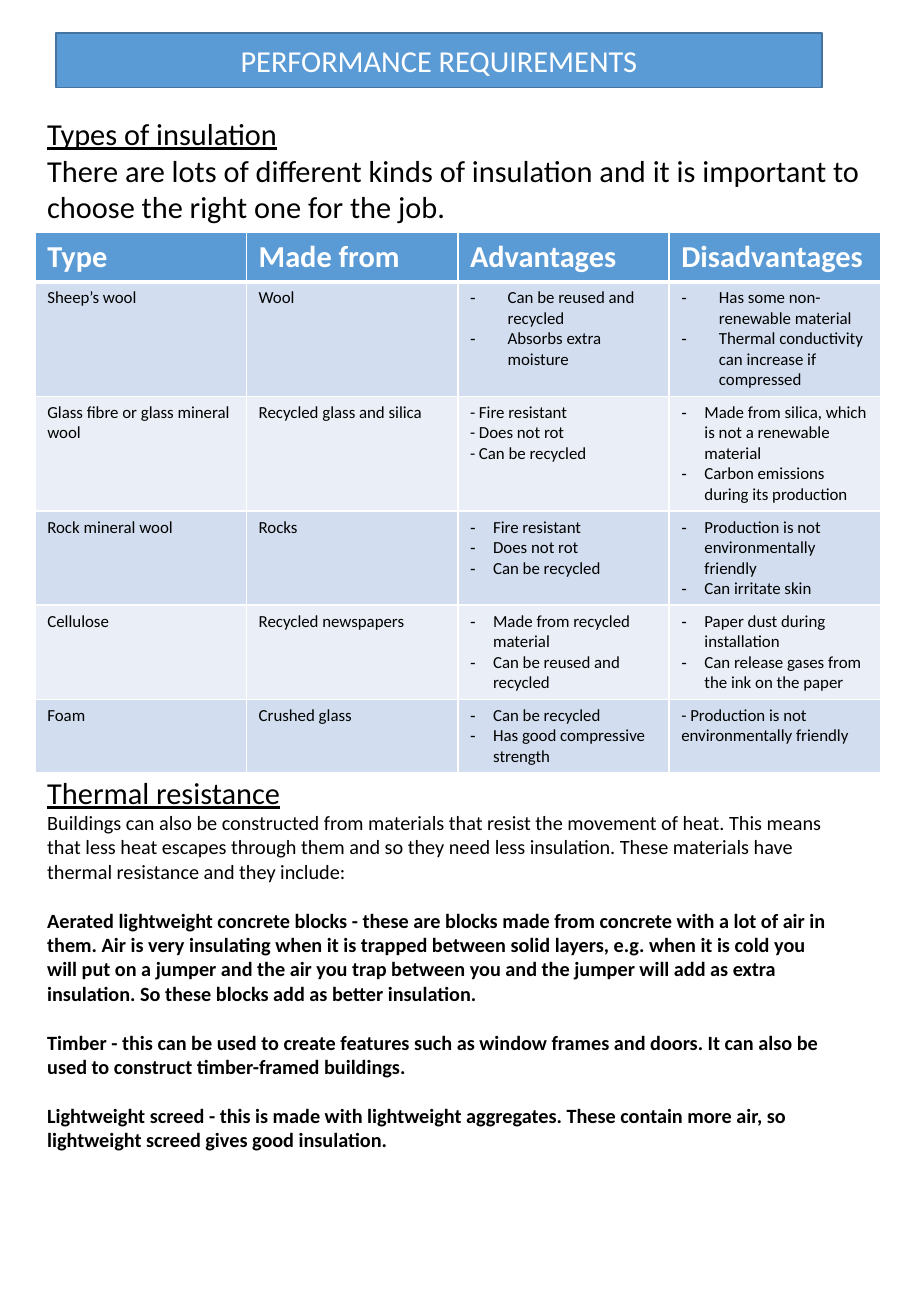
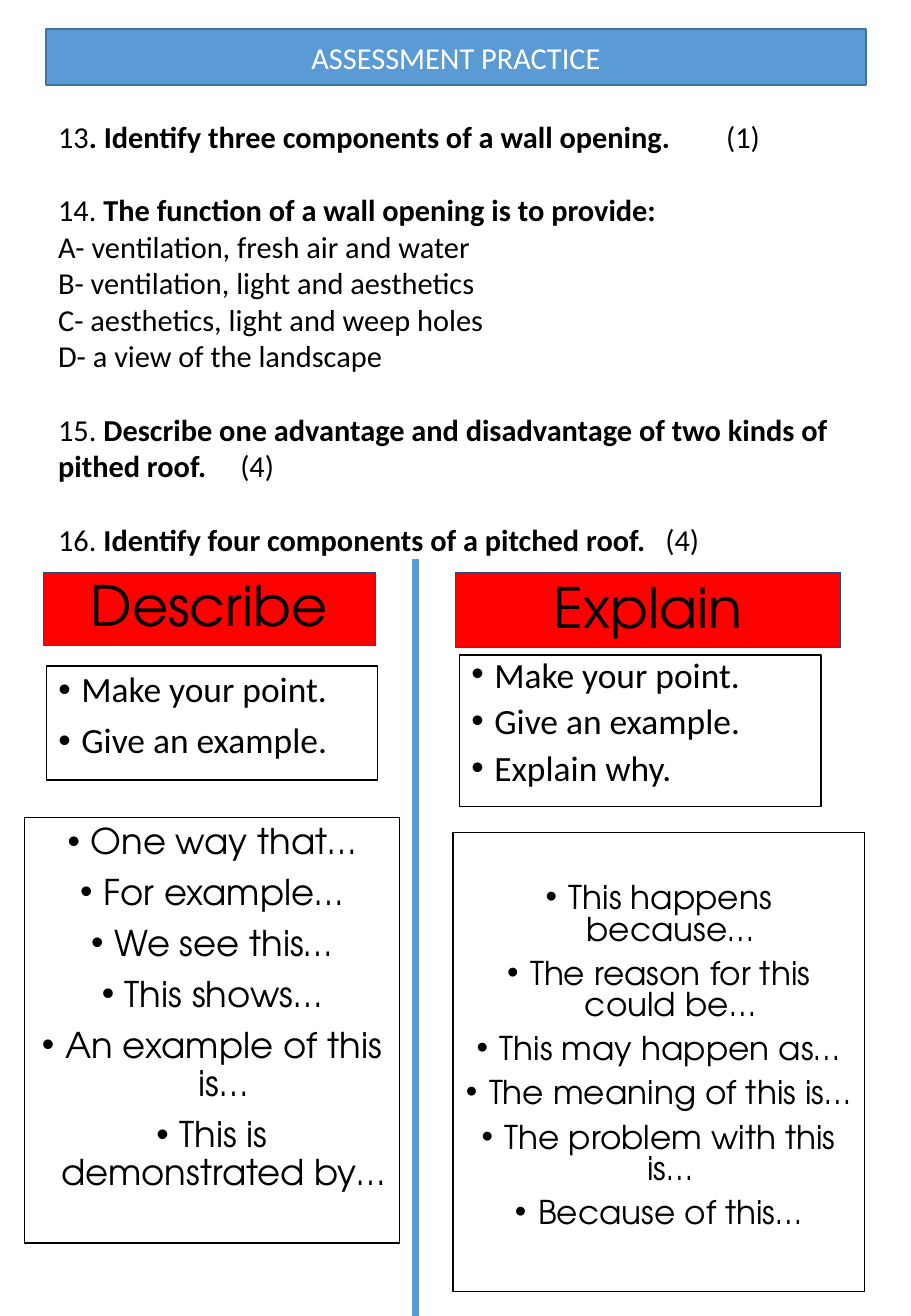
from lxml import etree
from pptx import Presentation
from pptx.dml.color import RGBColor
from pptx.enum.shapes import MSO_CONNECTOR, MSO_SHAPE
from pptx.enum.text import MSO_ANCHOR, MSO_AUTO_SIZE, PP_ALIGN
from pptx.oxml.ns import qn
from pptx.util import Pt

PX = 9144  # EMU; 100 px to the inch
PAGE_WIDTH, PAGE_HEIGHT = 750, 1083
COMPARISON_LAYOUT, TITLE_ONLY_LAYOUT = 4, 5
LEFT, CENTER = PP_ALIGN.LEFT, PP_ALIGN.CENTER
TOP, MIDDLE = MSO_ANCHOR.TOP, MSO_ANCHOR.MIDDLE
NO_AUTOFIT = MSO_AUTO_SIZE.NONE
RECTANGLE, STRAIGHT = MSO_SHAPE.RECTANGLE, MSO_CONNECTOR.STRAIGHT

COLORS = {
    "blue": "5B9BD5", "blue edge": "43739E", "navy": "1F4E79", "red": "FF0000",
    "white": "FFFFFF", "black": "000000", "dark band": "D2DEEF", "light band": "EAEFF7",
}
BODY_FONT, DISPLAY_FONT = "Calibri", "TeX Gyre Adventor"
PLAIN = {
    "size": 18, "font": BODY_FONT, "color": "black", "bold": False, "underline": False,
    "align": LEFT, "spacing": 1.0, "before": 0, "bullet": None, "indent": 0, "tab": None,
}
HEADING = {"underline": True}
BULLETS = {"bullet": "•", "indent": 19, "before": 7.5}

INSULATION_HEADER = ["Type", "Made from", "Advantages", "Disadvantages"]
# Row height, hanging indent, cells; a list in a cell becomes dash bullets.
INSULATION_ROWS = [
    (93, 31, ["Sheep’s wool", "Wool",
              ["Can be reused and recycled", "Absorbs extra moisture"],
              ["Has some non-renewable material",
               "Thermal conductivity can increase if compressed"]]),
    (93, 19, ["Glass fibre or glass mineral wool", "Recycled glass and silica",
              "- Fire resistant\n- Does not rot\n- Can be recycled",
              ["Made from silica, which is not a renewable material",
               "Carbon emissions during its production"]]),
    (77, 19, ["Rock mineral wool", "Rocks",
              ["Fire resistant", "Does not rot", "Can be recycled"],
              ["Production is not environmentally friendly", "Can irritate skin"]]),
    (77, 19, ["Cellulose", "Recycled newspapers",
              ["Made from recycled material", "Can be reused and recycled"],
              ["Paper dust during installation",
               "Can release gases from the ink on the paper"]]),
    (60, 19, ["Foam", "Crushed glass",
              ["Can be recycled", "Has good compressive strength"],
              "- Production is not environmentally friendly"]),
]
INSULATION_INTRO = [
    ("Types of insulation", HEADING),
    "There are lots of different kinds of insulation and it is important to choose "
    "the right one for the job.",
]
MATERIAL = {"size": 12, "bold": True, "before": 14.6}
THERMAL_RESISTANCE = [
    ("Thermal resistance", HEADING),
    ("Buildings can also be constructed from materials that resist the movement of heat. "
     "This means that less heat escapes through them and so they need less insulation. "
     "These materials have thermal resistance and they include:", {"size": 12}),
    ("Aerated lightweight concrete blocks - these are blocks made from concrete with a lot "
     "of air in them. Air is very insulating when it is trapped between solid layers, e.g. "
     "when it is cold you will put on a jumper and the air you trap between you and the "
     "jumper will add as extra insulation. So these blocks add as better insulation.",
     MATERIAL),
    ("Timber - this can be used to create features such as window frames and doors. It can "
     "also be used to construct timber-framed buildings.", MATERIAL),
    ("Lightweight screed - this is made with lightweight aggregates. These contain more "
     "air, so lightweight screed gives good insulation.", MATERIAL),
]
QUESTION_GAP = 22
QUESTIONS = [
    ("13*. Identify three components of a wall opening.*\t(1)", {"tab": 526}),
    ("14. *The function of a wall opening is to provide:", {"before": QUESTION_GAP}),
    "A- ventilation, fresh air and water",
    "B- ventilation, light and aesthetics",
    "C- aesthetics, light and weep holes",
    "D- a view of the landscape",
    ("15. *Describe one advantage and disadvantage of two kinds of pithed roof.*\t(4)",
     {"before": QUESTION_GAP, "tab": 161}),
    ("16. *Identify four components of a pitched roof.*\t(4)",
     {"before": QUESTION_GAP, "tab": 512}),
]
COMMAND_WORDS = [
    {"word": "Describe", "word at": (36, 471, 273, 60),
     "steps": ["Make your point.", "Give an example."],
     "steps at": (38, 548, 273, 94),
     "starters": ["One way that…", "For example…", "We see this…", "This shows…",
                  "An example of this is…", "This is demonstrated by…"],
     "starters at": (20, 673, 309, 350),
     "spacing": 0.9, "starter size": 21, "starter inset": 5},
    {"word": "Explain", "word at": (375, 471, 317, 62),
     "steps": ["Make your point.", "Give an example.", "Explain why."],
     "steps at": (378, 539, 298, 125),
     "starters": ["This happens because…", "The reason for this could be…",
                  "This may happen as…", "The meaning of this is…",
                  "The problem with this is…", "Because of this…"],
     "starters at": (373, 685, 339, 378),
     "spacing": 0.8, "starter size": 19.4, "starter inset": 43},
]


def rgb(name):
    return RGBColor.from_string(COLORS[name])


def add_xml(parent, tag, **attributes):
    return etree.SubElement(parent, qn(tag), attributes)


class Deck:
    """Holds the presentation, its style and the slide being built."""

    def __init__(self):
        self.presentation = Presentation()
        self.presentation.slide_width = PAGE_WIDTH * PX
        self.presentation.slide_height = PAGE_HEIGHT * PX
        self.slide = None

    def add_slide(self, layout, title, title_at):
        layouts = self.presentation.slide_layouts
        self.slide = self.presentation.slides.add_slide(layouts[layout])
        banner = self.slide.shapes.title
        self.frame(banner, title_at, "blue", "blue edge", 1, MIDDLE)
        self.fill_text(banner.text_frame, [title], color="white", align=CENTER)

    def frame(self, shape, at, fill=None, line=None, line_width=0.75, anchor=TOP, inset=5):
        """Place a shape and set its fill, outline and text area."""
        shape.left, shape.top, shape.width, shape.height = (length * PX for length in at)
        if fill:
            shape.fill.solid()
            shape.fill.fore_color.rgb = rgb(fill)
        if line:
            shape.line.color.rgb = rgb(line)
            shape.line.width = Pt(line_width)
        text_frame = shape.text_frame
        text_frame.word_wrap = True
        text_frame.auto_size = NO_AUTOFIT
        text_frame.vertical_anchor = anchor
        text_frame.margin_top = inset * PX

    def fill_text(self, text_frame, lines, **shared):
        """Set one paragraph per line; a line is text or (text, own style)."""
        for index, line in enumerate(lines):
            text, own = (line, {}) if isinstance(line, str) else line
            paragraph = text_frame.paragraphs[0] if index == 0 else text_frame.add_paragraph()
            self.fill_paragraph(paragraph, text, {**PLAIN, **shared, **own})

    def fill_paragraph(self, paragraph, text, style):
        """Fill a paragraph; each asterisk in the text switches bold."""
        for index, part in enumerate(text.split("*")):
            run = paragraph.add_run()
            run.text = part
            font = run.font
            font.name, font.size = style["font"], Pt(style["size"])
            font.bold = style["bold"] or index % 2 == 1
            font.underline = style["underline"]
            font.color.rgb = rgb(style["color"])
        paragraph.alignment = style["align"]
        paragraph.line_spacing = style["spacing"]
        paragraph.space_before = Pt(style["before"])
        paragraph.space_after = Pt(0)
        properties = paragraph._p.get_or_add_pPr()
        properties.set("marL", str(style["indent"] * PX))
        properties.set("indent", str(-style["indent"] * PX))
        if style["bullet"]:
            add_xml(properties, "a:buFont", typeface="Arial")
            add_xml(properties, "a:buChar", char=style["bullet"])
        else:
            add_xml(properties, "a:buNone")
        if style["tab"]:
            tabs = add_xml(properties, "a:tabLst")
            add_xml(tabs, "a:tab", pos=str(style["tab"] * PX), algn="l")

    def text(self, at, lines):
        box = self.slide.shapes.add_textbox(0, 0, 0, 0)
        self.frame(box, at)
        self.fill_text(box.text_frame, lines)

    def label(self, at, word):
        label = self.slide.shapes.add_shape(RECTANGLE, 0, 0, 0, 0)
        label.shadow.inherit = False
        self.frame(label, at, "red", "navy", anchor=MIDDLE)
        self.fill_text(label.text_frame, [word], size=33, font=DISPLAY_FONT,
                       align=CENTER, spacing=0.9)

    def bullet_list(self, placeholder, at, items, inset=5, **style):
        body = self.slide.placeholders[placeholder]
        self.frame(body, at, line="black", inset=inset)
        self.fill_text(body.text_frame, items, **{**BULLETS, **style})

    def rule(self, start, end, color, width):
        points = [length * PX for length in (*start, *end)]
        line = self.slide.shapes.add_connector(STRAIGHT, *points)
        line.line.color.rgb = rgb(color)
        line.line.width = Pt(width)
        add_xml(line._element.spPr, "a:effectLst")

    def table(self, left, top, column_width, header_height, header, rows):
        rows = [(header_height, 0, header), *rows]
        box = (left, top, column_width * len(header), sum(row[0] for row in rows))
        shape = self.slide.shapes.add_table(
            len(rows), len(header), *(length * PX for length in box))
        table = shape.table
        for column in table.columns:
            column.width = column_width * PX
        for row_index, (height, indent, contents) in enumerate(rows):
            table.rows[row_index].height = height * PX
            if row_index == 0:
                fill, style = "blue", {"color": "white", "bold": True}
            else:
                fill = "dark band" if row_index % 2 else "light band"
                style = {"size": 10}
            for column_index, content in enumerate(contents):
                cell = table.cell(row_index, column_index)
                self.cell_borders(cell, top=3 if row_index == 1 else 1,
                                  bottom=3 if row_index == 0 else 1)
                cell.fill.solid()
                cell.fill.fore_color.rgb = rgb(fill)
                if isinstance(content, list):
                    self.fill_text(cell.text_frame, content, bullet="-", indent=indent,
                                   **style)
                else:
                    self.fill_text(cell.text_frame, content.split("\n"), **style)

    def cell_borders(self, cell, top, bottom):
        properties = cell._tc.get_or_add_tcPr()
        for side, width in (("L", 1), ("R", 1), ("T", top), ("B", bottom)):
            border = add_xml(properties, f"a:ln{side}", w=str(Pt(width)))
            fill = add_xml(border, "a:solidFill")
            add_xml(fill, "a:srgbClr", val=COLORS["white"])


def build_requirements(deck):
    deck.add_slide(TITLE_ONLY_LAYOUT, "PERFORMANCE REQUIREMENTS", (46, 27, 631, 45))
    deck.text((29, 90, 696, 131), INSULATION_INTRO)
    deck.table(29, 191, 174, 41, INSULATION_HEADER, INSULATION_ROWS)
    deck.text((29, 632, 662, 404), THERMAL_RESISTANCE)


def build_assessment(deck):
    deck.add_slide(COMPARISON_LAYOUT, "ASSESSMENT PRACTICE", (38, 24, 675, 46))
    deck.text((38, 92, 675, 404), QUESTIONS)
    deck.rule((342, 460), (342, PAGE_HEIGHT), "blue", 4.5)
    for index, command in enumerate(COMMAND_WORDS):
        steps, starters = 2 * index + 1, 2 * index + 2
        deck.label(command["word at"], command["word"])
        deck.bullet_list(steps, command["steps at"], command["steps"],
                         size=21, spacing=command["spacing"])
        deck.bullet_list(starters, command["starters at"], command["starters"],
                         inset=command["starter inset"], size=command["starter size"],
                         font=DISPLAY_FONT, align=CENTER, spacing=command["spacing"])


def main():
    deck = Deck()
    build_requirements(deck)
    build_assessment(deck)
    deck.presentation.save("out.pptx")


if __name__ == "__main__":
    main()
